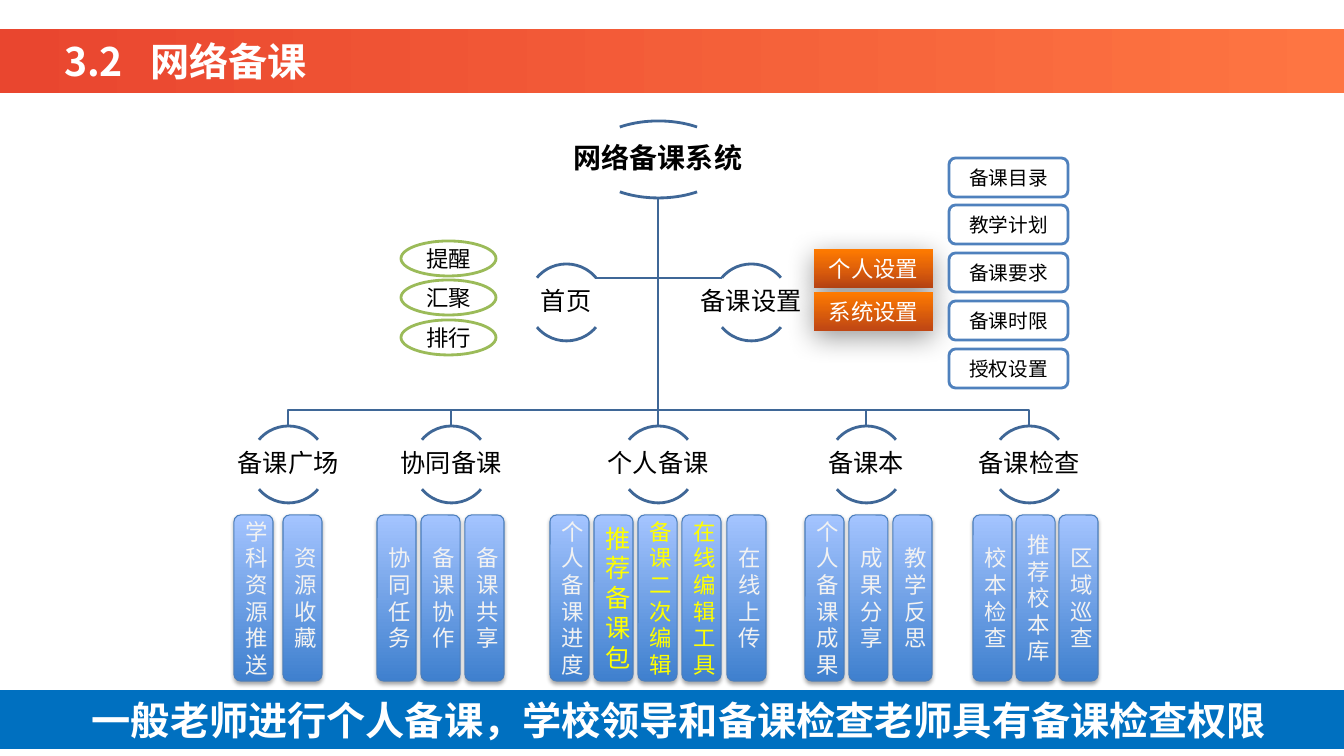
"""Build the slide showing the structure of an online lesson preparation system."""
from dataclasses import dataclass

from lxml.etree import SubElement
from pptx import Presentation
from pptx.dml.color import RGBColor
from pptx.enum.shapes import MSO_CONNECTOR as Connector, MSO_SHAPE as Preset
from pptx.enum.text import MSO_ANCHOR as Anchor, MSO_AUTO_SIZE as AutoSize, PP_ALIGN as Align
from pptx.oxml.ns import qn
from pptx.util import Pt

EMU_PER_PX = 914400 / 100.8


@dataclass(frozen=True)
class Theme:
    """Colours, fonts and type sizes of the slide."""
    font: str = "Noto Sans CJK SC"
    tree_font: str = "Calibri"
    black: str = "000000"
    white: str = "FFFFFF"
    pale: str = "F2F2F2"
    highlight: str = "FFFF00"
    branch: str = "3F6797"
    setting: str = "4F81BD"
    home: str = "9BBB59"
    footer: str = "0070C0"
    column_line: str = "4B7EBC"
    column_fill: tuple = ((0, "3F80CE"), (1, "A4C4FF"))
    button_fill: tuple = ((0, "FF7B00"), (0.97, "C04714"))
    banner_fill: tuple = ((0, "E9462F"), (1, "FE7542"))
    headline: int = 28
    root: int = 20
    node: int = 18
    label: int = 16
    small: int = 14


def px(length):
    """Turn pixels into EMU."""
    return round(length * EMU_PER_PX)


def spread(first, last, count):
    """Return evenly spaced positions from first to last."""
    return [first + i * (last - first) // (count - 1) for i in range(count)]


def write_text(shape, text, *, size, color, font, bold=False, align=Align.CENTER,
               margin=2, wrap=True, spacing=None, tab=None):
    """Write one formatted paragraph into a shape."""
    frame = shape.text_frame
    frame.auto_size = AutoSize.NONE
    frame.word_wrap = wrap
    frame.vertical_anchor = Anchor.MIDDLE
    frame.margin_left = frame.margin_right = px(margin)
    frame.margin_top = frame.margin_bottom = px(1)
    paragraph = frame.paragraphs[0]
    paragraph.alignment = align
    if spacing:
        paragraph.line_spacing = spacing
    if tab:
        stops = SubElement(paragraph._p.get_or_add_pPr(), qn("a:tabLst"))
        SubElement(stops, qn("a:tab"), pos=str(px(tab)), algn="l")
    run = paragraph.add_run()
    run.text = text
    run.font.name = font
    run.font.size = Pt(size)
    run.font.bold = bold
    run.font.color.rgb = RGBColor.from_string(color)
    SubElement(run.font._element, qn("a:ea"), typeface=font)


class SlideBuilder:
    """Draws styled elements on the current slide."""

    def __init__(self, slide, theme):
        """Keep the slide and its theme."""
        self.slide = slide
        self.shapes = slide.shapes
        self.theme = theme

    def paint(self, shape, fill=None, line=None, weight=2, angle=0):
        """Set the fill and line of a shape and remove its shadow."""
        shape.shadow.inherit = False
        if fill is None:
            shape.fill.background()
        elif isinstance(fill, str):
            shape.fill.solid()
            shape.fill.fore_color.rgb = RGBColor.from_string(fill)
        else:
            shape.fill.gradient()
            shape.fill.gradient_angle = angle
            for stop, (position, color) in zip(shape.fill.gradient_stops, fill):
                stop.position = position
                stop.color.rgb = RGBColor.from_string(color)
        if line:
            shape.line.color.rgb = RGBColor.from_string(line)
            shape.line.width = Pt(weight)
        else:
            shape.line.fill.background()

    def box(self, preset, left, top, width, height, **style):
        """Add a painted preset shape."""
        shape = self.shapes.add_shape(preset, px(left), px(top), px(width), px(height))
        self.paint(shape, **style)
        return shape

    def text_box(self, text, left, top, width, height, **text_format):
        """Add a text box."""
        shape = self.shapes.add_textbox(px(left), px(top), px(width), px(height))
        write_text(shape, text, **text_format)

    def drop_shadow(self, shape, alpha, blur, distance):
        """Add a black shadow below a shape."""
        effects = shape.element.spPr.find(qn("a:effectLst"))
        shadow = SubElement(effects, qn("a:outerShdw"), blurRad=str(Pt(blur)),
                            dist=str(Pt(distance)), dir="5400000", rotWithShape="0")
        color = SubElement(shadow, qn("a:srgbClr"), val=self.theme.black)
        SubElement(color, qn("a:alpha"), val=str(alpha * 1000))

    def elbow(self, *points):
        """Add a bent branch through the points."""
        start, *others = [(px(x), px(y)) for x, y in points]
        outline = self.shapes.build_freeform(*start)
        outline.add_line_segments(others, close=False)
        self.paint(outline.convert_to_shape(), line=self.theme.branch)

    def trunk(self, x, top, bottom):
        """Add the straight vertical branch."""
        connector = self.shapes.add_connector(Connector.STRAIGHT, px(x), px(top), px(x), px(bottom))
        connector.line.color.rgb = RGBColor.from_string(self.theme.branch)
        connector.line.width = Pt(2)
        SubElement(connector.element.spPr, qn("a:effectLst"))

    def node(self, text, center, top, width=77, size=None, bold=False):
        """Add a label between an upper and a lower arc."""
        for start, end in ((132, 192), (24, 84)):
            arc = self.box(Preset.ARC, center - width // 2, top, width, 77, line=self.theme.branch)
            arc.adjustments[0], arc.adjustments[1] = start, end
        self.text_box(text, center - width, top + 14, 2 * width, 49, size=size or self.theme.node,
                      color=self.theme.black, font=self.theme.tree_font, bold=bold,
                      margin=1, spacing=0.9)

    def column(self, text, left, color, size):
        """Add a tall box whose text runs downwards."""
        shape = self.box(Preset.ROUNDED_RECTANGLE, left, 515, 39, 166, fill=self.theme.column_fill,
                         angle=90, line=self.theme.column_line, weight=0.75)
        self.drop_shadow(shape, 35, 3.1, 1.8)
        write_text(shape, text, size=size, color=color, font=self.theme.font,
                   margin=10, spacing=Pt(round(size * 1.19, 1)))

    def stack(self, labels, preset, left, first, last, width, height, size, color, **style):
        """Add labelled boxes at equal steps downwards and return them."""
        boxes = []
        for text, top in zip(labels, spread(first, last, len(labels))):
            shape = self.box(preset, left, top, width, height, **style)
            write_text(shape, text, size=size, color=color, font=self.theme.font)
            boxes.append(shape)
        return boxes

    def title(self, text):
        """Add the banner and set the title on it."""
        self.box(Preset.RECTANGLE, 0, 29, 1346, 64, fill=self.theme.banner_fill)
        title = self.shapes.title
        title.left, title.top, title.width, title.height = px(54), px(32), px(1038), px(57)
        write_text(title, text, size=self.theme.headline, color=self.theme.white,
                   font=self.theme.font, bold=True, align=Align.LEFT, margin=10, tab=86)
        title.element.getparent().append(title.element)

    def footer(self, text):
        """Add the closing statement on its bar."""
        self.box(Preset.RECTANGLE, 0, 690, 1344, 59, fill=self.theme.footer)
        self.text_box(text, 69, 694, 1220, 52, size=self.theme.headline, color=self.theme.white,
                      font=self.theme.font, bold=True)


MODULES = [
    ("备课广场", 288, 234, 283, ["学科资源推送", "资源收藏"]),
    ("协同备课", 451, 377, 465, ["协同任务", "备课协作", "备课共享"]),
    ("个人备课", 658, 550, 727, ["个人备课进度", "推荐备课包", "备课二次编辑", "在线编辑工具", "在线上传"]),
    ("备课本", 866, 805, 893, ["个人备课成果", "成果分享", "教学反思"]),
    ("备课检查", 1029, 973, 1059, ["校本检查", "推荐校本库", "区域巡查"]),
]
HIGHLIGHT_SIZES = {"推荐备课包": 18, "备课二次编辑": 16, "在线编辑工具": 16}
ROOT_X, ROOT_BOTTOM, BRANCH_Y, MODULE_TOP = 658, 198, 410, 426


def main():
    """Build and save the presentation."""
    presentation = Presentation()
    presentation.slide_width, presentation.slide_height = px(1344), px(756)
    theme = Theme()
    builder = SlideBuilder(presentation.slides.add_slide(presentation.slide_layouts[5]), theme)

    for x in (722, 595):
        builder.elbow((ROOT_X, ROOT_BOTTOM), (ROOT_X, 278), (x, 278))
    for _, x, *_ in MODULES:
        if x == ROOT_X:
            builder.trunk(x, ROOT_BOTTOM, MODULE_TOP)
        else:
            builder.elbow((ROOT_X, ROOT_BOTTOM), (ROOT_X, BRANCH_Y), (x, BRANCH_Y), (x, MODULE_TOP))

    builder.node("网络备课系统", ROOT_X, 121, width=143, size=theme.root, bold=True)
    builder.node("首页", 566, 264)
    builder.node("备课设置", 751, 264)
    for name, center, first, last, features in MODULES:
        builder.node(name, center, MODULE_TOP)
        for feature, left in zip(features, spread(first, last, len(features))):
            color = theme.highlight if feature in HIGHLIGHT_SIZES else theme.pale
            builder.column(feature, left, color, HIGHLIGHT_SIZES.get(feature, theme.label))

    buttons = builder.stack(["个人设置", "系统设置"], Preset.RECTANGLE, 814, 249, 292, 119, 39,
                            theme.label, theme.white, fill=theme.button_fill, angle=270)
    for button in buttons:
        builder.drop_shadow(button, 40, 20, 5)
    builder.stack(["备课目录", "教学计划", "备课要求", "备课时限", "授权设置"],
                  Preset.ROUNDED_RECTANGLE, 949, 158, 349, 119, 39, theme.small, theme.black,
                  fill=theme.white, line=theme.setting)
    builder.stack(["提醒", "汇聚", "排行"], Preset.OVAL, 401, 241, 320, 95, 35,
                  theme.label, theme.black, fill=theme.white, line=theme.home)
    builder.footer("一般老师进行个人备课，学校领导和备课检查老师具有备课检查权限")
    builder.title("3.2\t网络备课")
    presentation.save("out.pptx")


if __name__ == "__main__":
    main()
